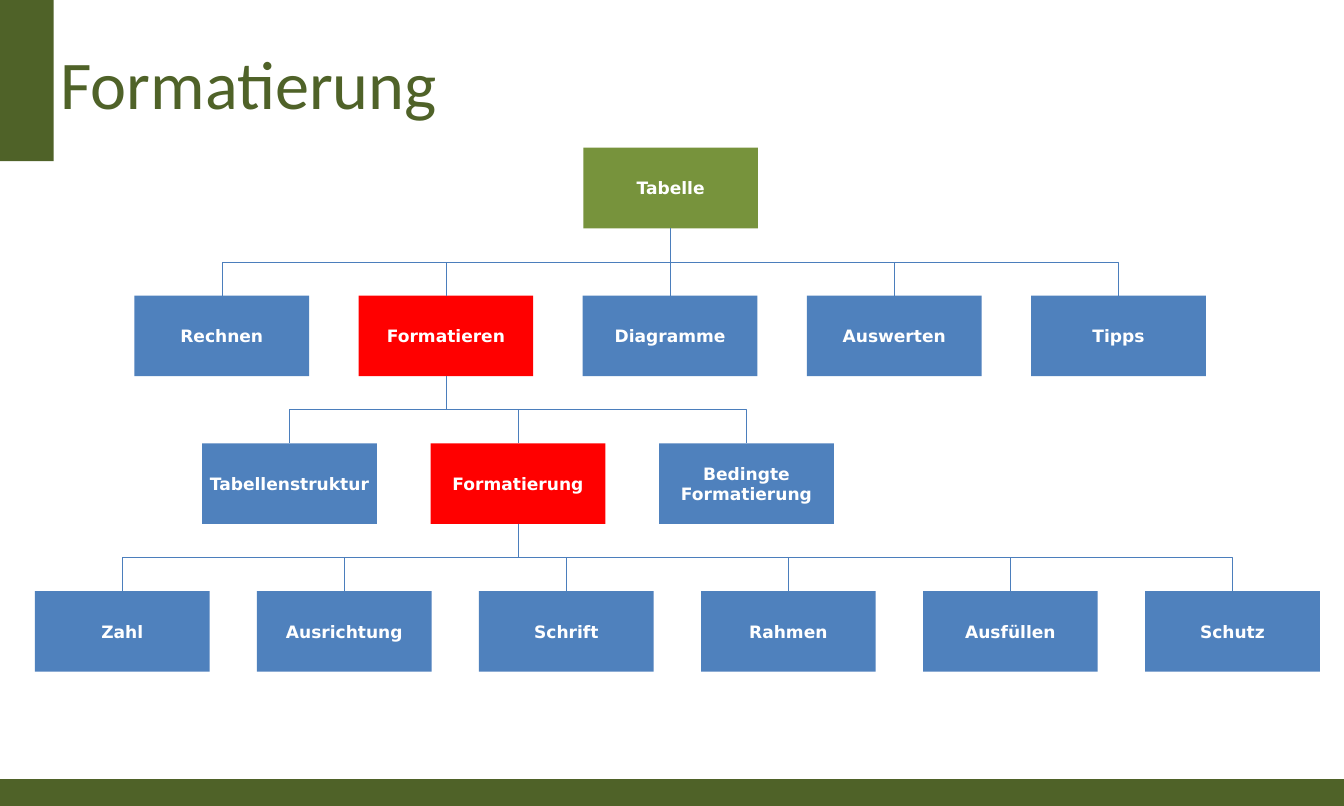
import pptx
import pptx.dml.color
import pptx.enum.shapes
import pptx.enum.text
import pptx.oxml.ns
import pptx.util
import lxml.etree

COLUMNS, ROWS = 50, 30
BOX_WIDTH, BOX_HEIGHT = 6.5, 3
GREEN, LIGHT_GREEN, BLUE, RED = "4F6228", "77933C", "4F81BD", "FF0000"
WHITE, LINE_BLUE = "FFFFFF", "4B7EBC"

LEVELS = [
    (21.7, 5.5, 0, ["Tabelle"]),
    (5, 11, 8.34, ["Rechnen", "Formatieren", "Diagramme", "Auswerten", "Tipps"]),
    (7.52, 16.5, 8.5, ["Tabellenstruktur", "Formatierung", "Bedingte Formatierung"]),
    (1.3, 22, 8.26, ["Zahl", "Ausrichtung", "Schrift", "Rahmen", "Ausfüllen", "Schutz"]),
]
BOX_COLOURS = {"Tabelle": LIGHT_GREEN, "Formatieren": RED, "Formatierung": RED}


def colour(hex_string):
    """Turn a hex string into a colour."""
    return pptx.dml.color.RGBColor.from_string(hex_string)


class TreeSlide:
    """Draw a tree of topics on a slide grid."""

    def __init__(self, deck):
        """Add a blank slide and measure its grid."""
        self.slide = deck.slides.add_slide(deck.slide_layouts[6])
        self.column = deck.slide_width / COLUMNS
        self.row = deck.slide_height / ROWS

    def place(self, left, top, width, height):
        """Convert grid units to slide lengths."""
        return (round(left * self.column), round(top * self.row),
                round(width * self.column), round(height * self.row))

    def bar(self, left, top, width, height, fill):
        """Add a plain filled rectangle."""
        shape = self.slide.shapes.add_shape(
            pptx.enum.shapes.MSO_SHAPE.RECTANGLE, *self.place(left, top, width, height))
        shape.shadow.inherit = False
        shape.fill.solid()
        shape.fill.fore_color.rgb = colour(fill)
        shape.line.fill.background()
        return shape

    def label(self, shape, text, size, font, ink, bold, alignment):
        """Put one styled, vertically centred paragraph in a shape."""
        frame = shape.text_frame
        frame.text = text
        frame.word_wrap = True
        frame.vertical_anchor = pptx.enum.text.MSO_ANCHOR.MIDDLE
        para = frame.paragraphs[0]
        para.alignment = alignment
        span = para.runs[0]
        span.font.size = pptx.util.Pt(size)
        span.font.name = font
        span.font.bold = bold
        span.font.color.rgb = colour(ink)

    def title(self, text):
        """Add the slide title."""
        box = self.slide.shapes.add_textbox(*self.place(2, 1.15, 46.55, 3.8))
        self.label(box, text, 72, "Calibri", GREEN, False, pptx.enum.text.PP_ALIGN.LEFT)

    def topic(self, left, top, text):
        """Add a topic box."""
        box = self.bar(left, top, BOX_WIDTH, BOX_HEIGHT, BOX_COLOURS.get(text, BLUE))
        frame = box.text_frame
        frame.margin_left = frame.margin_right = frame.margin_top = frame.margin_bottom = 0
        self.label(box, text, 18, "DejaVu Sans", WHITE, True, pptx.enum.text.PP_ALIGN.CENTER)
        return box

    def branch(self, parent, child):
        """Join a parent's bottom to a child's top with a turned elbow."""
        start_x, start_y = parent.left + parent.width // 2, parent.top + parent.height
        end_x, end_y = child.left + child.width // 2, child.top
        middle_x, middle_y = (start_x + end_x) // 2, (start_y + end_y) // 2
        half_drop, half_span = (end_y - start_y) // 2, abs(end_x - start_x) // 2
        side = 1 if end_x >= start_x else -1
        line = self.slide.shapes.add_connector(
            pptx.enum.shapes.MSO_CONNECTOR.ELBOW,
            middle_x + side * half_drop, middle_y - half_span,
            middle_x - side * half_drop, middle_y + half_span)
        quarter_turns = 3 if side == 1 else 1
        properties = line._element.spPr
        properties.find(pptx.oxml.ns.qn("a:xfrm")).set("rot", str(quarter_turns * 5400000))
        line.line.color.rgb = colour(LINE_BLUE)
        line.line.width = pptx.util.Pt(0.5)
        lxml.etree.SubElement(properties, pptx.oxml.ns.qn("a:effectLst"))

    def tree(self, levels):
        """Draw every level and join it to the highlighted topic above."""
        parent = None
        for left, top, step, names in levels:
            boxes = {name: self.topic(left + step * index, top, name)
                     for index, name in enumerate(names)}
            if parent is not None:
                for box in boxes.values():
                    self.branch(parent, box)
            parent = next((boxes[name] for name in names if name in BOX_COLOURS), None)


def main():
    """Build and save the deck."""
    deck = pptx.Presentation()
    deck.slide_width = pptx.util.Cm(COLUMNS)
    deck.slide_height = pptx.util.Cm(ROWS)
    page = TreeSlide(deck)
    page.bar(0, 29, COLUMNS, 1, GREEN)
    page.bar(0, 0, 2, 6, GREEN)
    page.title("Formatierung")
    page.tree(LEVELS)
    deck.save("out.pptx")


if __name__ == "__main__":
    main()
